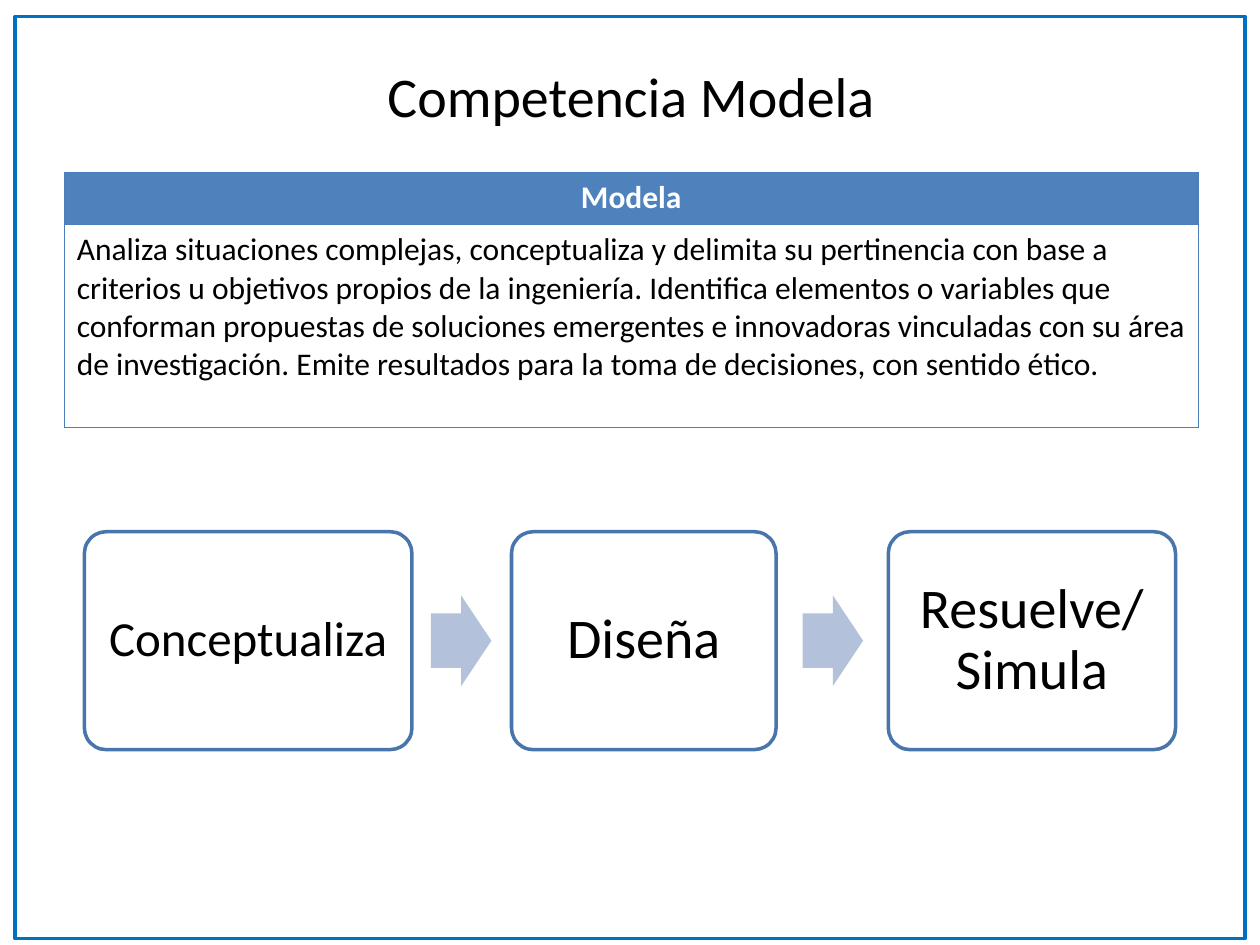
from pptx import Presentation
from pptx.dml.color import RGBColor
from pptx.enum.shapes import MSO_SHAPE as Shape
from pptx.enum.text import MSO_ANCHOR as Anchor, PP_ALIGN as Align
from pptx.oxml.ns import qn
from pptx.util import Inches, Pt
from lxml.etree import SubElement

TITLE = "Competencia Modela"
COMPETENCE = "Modela"
DESCRIPTION = (
    "Analiza situaciones complejas, conceptualiza y delimita su pertinencia con base a "
    "criterios u objetivos propios de la ingeniería. Identifica elementos o variables que "
    "conforman propuestas de soluciones emergentes e innovadoras vinculadas con su área "
    "de investigación. Emite resultados para la toma de decisiones, con sentido ético."
)
# label, left, width, type size
STEPS = [
    ("Conceptualiza", 0.67, 2.6, 28),
    ("Diseña", 4.06, 2.1, 32),
    ("Resuelve/Simula", 7.05, 2.28, 32),
]
ARROW_LEFTS = [3.42, 6.37]
STEP_TOP, STEP_HEIGHT = 4.22, 1.73
ARROW_WIDTH, ARROW_HEIGHT = 0.48, 0.72
CORNER = 0.1

THEME = {
    "font": "Calibri", "title_size": 32, "table_size": 18,
    "text": "000000", "white": "FFFFFF", "frame": "0070C0",
    "header": "4F81BD", "border": "4B7EBC", "outline": "4875AC", "arrow": "B3C1DB",
}


def color(name):
    return RGBColor.from_string(THEME[name])


def write(text_frame, text, size, color_name="text", align=Align.CENTER, bold=False):
    text_frame.word_wrap = True
    paragraph = text_frame.paragraphs[0]
    paragraph.text = text
    paragraph.alignment = align
    font = paragraph.font
    font.name, font.size, font.bold = THEME["font"], Pt(size), bold
    font.color.rgb = color(color_name)
    return paragraph


def add_shape(slide, kind, left, top, width, height, fill=None, line=None):
    shape = slide.shapes.add_shape(kind, *map(Inches, (left, top, width, height)))
    shape.shadow.inherit = False
    if fill:
        shape.fill.solid()
        shape.fill.fore_color.rgb = color(fill)
    else:
        shape.fill.background()
    if line:
        shape.line.color.rgb = color(line)
        shape.line.width = Pt(2)
    else:
        shape.line.fill.background()
    return shape


def style_cell(cell, fill):
    properties = cell._tc.get_or_add_tcPr()
    for side in ("lnL", "lnR", "lnT", "lnB"):
        border = SubElement(properties, qn(f"a:{side}"), w=str(Pt(0.75)))
        solid = SubElement(border, qn("a:solidFill"))
        SubElement(solid, qn("a:srgbClr"), val=THEME["border"])
    cell.fill.solid()
    cell.fill.fore_color.rgb = color(fill)


def add_title(slide):
    box = slide.shapes.add_textbox(*map(Inches, (0.51, 0.13, 9, 1.25)))
    box.text_frame.vertical_anchor = Anchor.MIDDLE
    write(box.text_frame, TITLE, THEME["title_size"])


def add_competence_table(slide):
    table = slide.shapes.add_table(2, 1, *map(Inches, (0.51, 1.37, 9, 2.02))).table
    table.rows[0].height, table.rows[1].height = Inches(0.41), Inches(1.61)
    header, body = table.cell(0, 0), table.cell(1, 0)
    style_cell(header, "header")
    style_cell(body, "white")
    write(header.text_frame, COMPETENCE, THEME["table_size"], "white", bold=True)
    write(body.text_frame, DESCRIPTION, THEME["table_size"], align=Align.LEFT)


def add_step(slide, label, left, width, size):
    box = add_shape(slide, Shape.ROUNDED_RECTANGLE, left, STEP_TOP, width, STEP_HEIGHT,
                    "white", "outline")
    box.adjustments[0] = CORNER
    frame = box.text_frame
    frame.vertical_anchor = Anchor.MIDDLE
    frame.margin_left = frame.margin_right = Inches(0.12)
    write(frame, label, size).line_spacing = 0.9


def add_arrow(slide, left):
    top = STEP_TOP + (STEP_HEIGHT - ARROW_HEIGHT) / 2
    arrow = add_shape(slide, Shape.RIGHT_ARROW, left, top, ARROW_WIDTH, ARROW_HEIGHT, "arrow")
    arrow.adjustments[0], arrow.adjustments[1] = 0.6, 0.5


def main():
    presentation = Presentation()
    presentation.slide_width, presentation.slide_height = Inches(10), Inches(7.5)
    slide = presentation.slides.add_slide(presentation.slide_layouts[6])
    add_title(slide)
    add_competence_table(slide)
    add_shape(slide, Shape.RECTANGLE, 0.12, 0.13, 9.76, 7.32, line="frame")
    for step in STEPS:
        add_step(slide, *step)
    for left in ARROW_LEFTS:
        add_arrow(slide, left)
    presentation.save("out.pptx")


if __name__ == "__main__":
    main()
